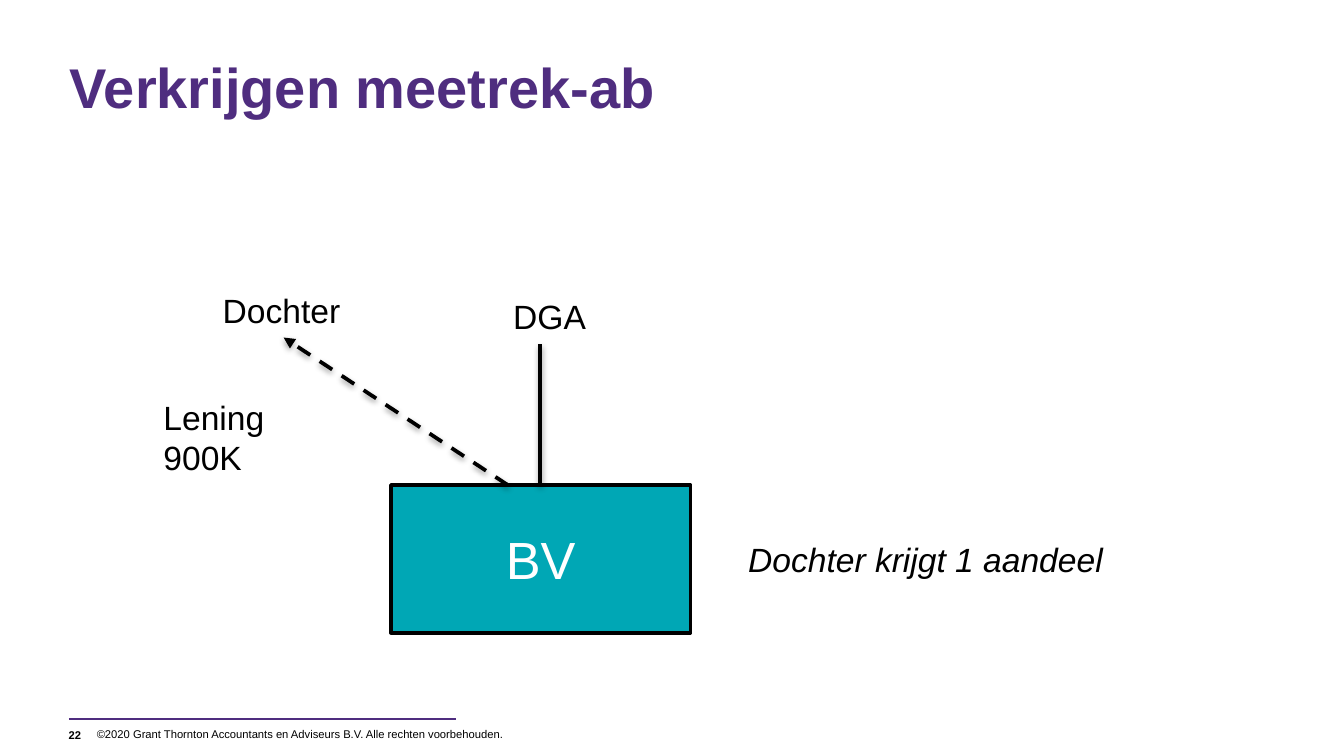
"""Builds the slide on how a daughter acquires a 'meetrek-ab' through one share in the BV."""
from dataclasses import dataclass

from lxml import etree
from pptx import Presentation
from pptx.dml.color import RGBColor
from pptx.enum.dml import MSO_LINE
from pptx.enum.shapes import MSO_CONNECTOR, MSO_SHAPE
from pptx.enum.text import MSO_ANCHOR, PP_ALIGN
from pptx.oxml import parse_xml
from pptx.oxml.ns import nsdecls, qn
from pptx.util import Cm, Pt

TOP, MIDDLE = MSO_ANCHOR.TOP, MSO_ANCHOR.MIDDLE
CENTER = PP_ALIGN.CENTER
DASH = MSO_LINE.DASH
STRAIGHT = MSO_CONNECTOR.STRAIGHT
RECTANGLE = MSO_SHAPE.RECTANGLE


@dataclass(frozen=True)
class Theme:
    font: str = "Arial"
    purple: RGBColor = RGBColor(0x4F, 0x2D, 0x7F)
    teal: RGBColor = RGBColor(0x00, 0xA7, 0xB5)
    black: RGBColor = RGBColor(0, 0, 0)
    white: RGBColor = RGBColor(255, 255, 255)
    title: Pt = Pt(30)
    entity: Pt = Pt(28)
    label: Pt = Pt(18)
    footer: Pt = Pt(6)
    rule: Pt = Pt(1.5)
    outline: Pt = Pt(2)


theme = Theme()
SHADOW = (
    f'<a:effectLst {nsdecls("a")}>'
    '<a:outerShdw blurRad="40000" dist="20000" dir="5400000" rotWithShape="0">'
    '<a:srgbClr val="000000"><a:alpha val="38000"/></a:srgbClr>'
    "</a:outerShdw></a:effectLst>"
)
NO_SHADOW = f'<a:effectLst {nsdecls("a")}/>'


def write(shape, text, size, color=theme.black, bold=False, italic=False, anchor=TOP, insets=None):
    frame = shape.text_frame
    frame.word_wrap = True
    frame.vertical_anchor = anchor
    if insets is not None:
        frame.margin_left = frame.margin_right = 0
        frame.margin_top = frame.margin_bottom = insets
    run = frame.paragraphs[0].add_run()
    run.text = text
    font = run.font
    font.name, font.size, font.bold, font.italic = theme.font, size, bold, italic
    font.color.rgb = color


def connect(start, end, color, width, effect, dash=None):
    line = slide.shapes.add_connector(STRAIGHT, *map(Cm, start + end))
    line.line.color.rgb = color
    line.line.width = width
    if dash is not None:
        line.line.dash_style = dash
    line._element.spPr.append(parse_xml(effect))
    return line


prs = Presentation()
prs.slide_width, prs.slide_height = Cm(25.4), Cm(14.29)
slide = prs.slides.add_slide(prs.slide_layouts[6])

copyright_line = slide.shapes.add_textbox(Cm(1.83), Cm(13.61), Cm(8.36), Cm(0.51))
write(copyright_line, "©2020 Grant Thornton Accountants en Adviseurs B.V. Alle rechten voorbehouden.",
      theme.footer, anchor=MIDDLE, insets=Cm(0.13))
connect((1.3, 13.59), (8.61, 13.59), theme.purple, theme.rule, NO_SHADOW)

title = slide.shapes.add_textbox(Cm(1.32), Cm(0.99), Cm(22.78), Cm(2.34))
write(title, "Verkrijgen meetrek-ab", theme.title, theme.purple, bold=True, insets=0)

page_number = slide.shapes.add_textbox(Cm(1.3), Cm(13.64), Cm(0.51), Cm(0.51))
write(page_number, "22", theme.footer, bold=True, anchor=MIDDLE, insets=0)

bv_top = 9.17
bv = slide.shapes.add_shape(RECTANGLE, Cm(7.39), Cm(bv_top), Cm(5.66), Cm(2.79))
bv.shadow.inherit = False
bv.fill.solid()
bv.fill.fore_color.rgb = theme.teal
bv.line.color.rgb = theme.black
bv.line.width = theme.outline
write(bv, "BV", theme.entity, theme.white, anchor=MIDDLE)
bv.text_frame.paragraphs[0].alignment = CENTER

connect((10.21, bv_top), (10.21, 6.5), theme.black, theme.outline, SHADOW)
loan = connect((9.6, bv_top), (5.36, 6.38), theme.black, theme.outline, SHADOW, DASH)
etree.SubElement(loan.line._get_or_add_ln(), qn("a:tailEnd"), type="triangle")

for text, left, top, width, height, italic in (
    ("DGA", 9.45, 5.46, 2.82, 1.02, False),
    ("Dochter", 3.96, 5.36, 2.82, 1.02, False),
    ("Lening 900K", 2.84, 7.37, 2.82, 1.8, False),
    ("Dochter krijgt 1 aandeel", 13.89, 10.06, 7.85, 1.02, True),
):
    label = slide.shapes.add_textbox(Cm(left), Cm(top), Cm(width), Cm(height))
    write(label, text, theme.label, italic=italic)

prs.save("out.pptx")
